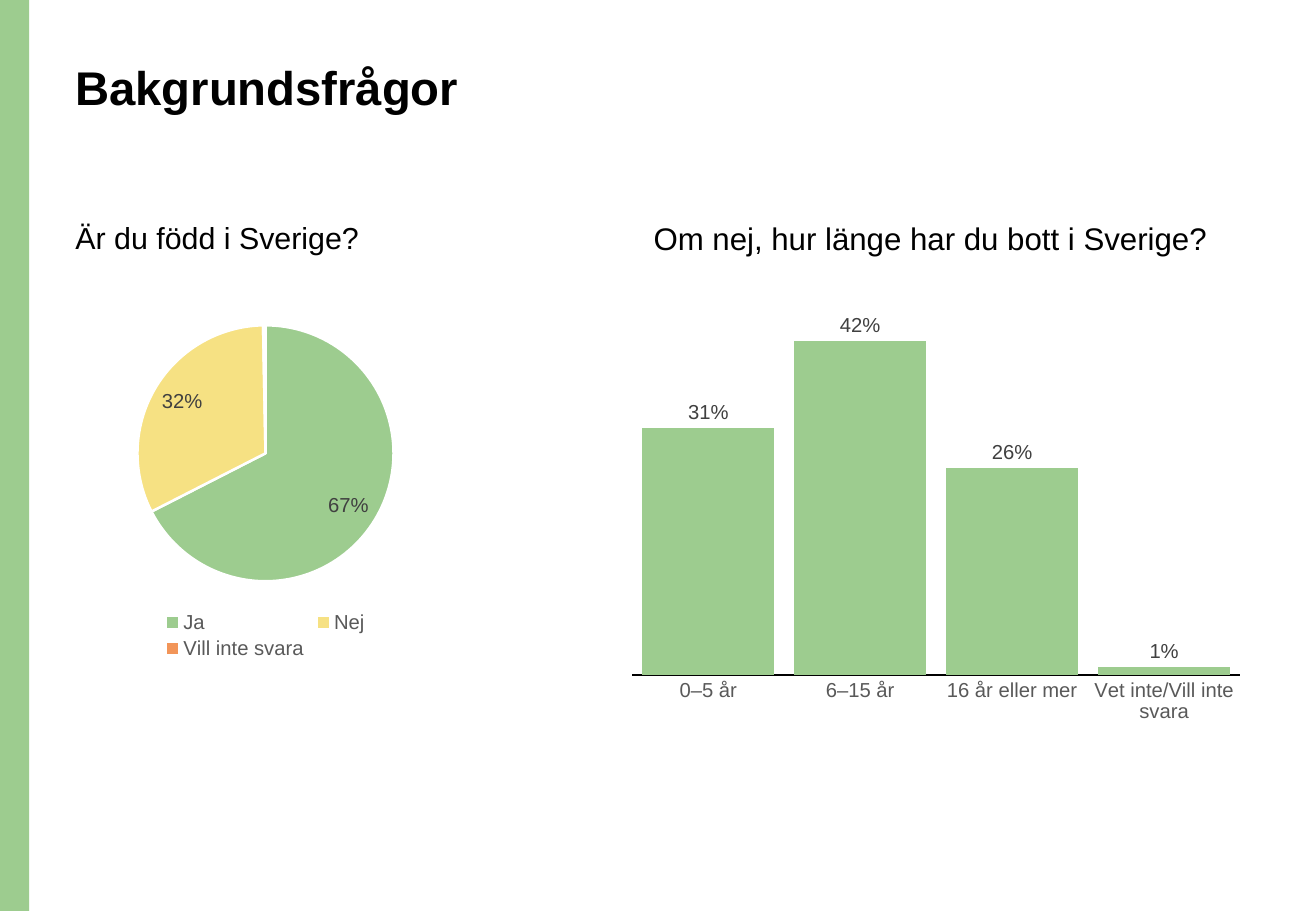
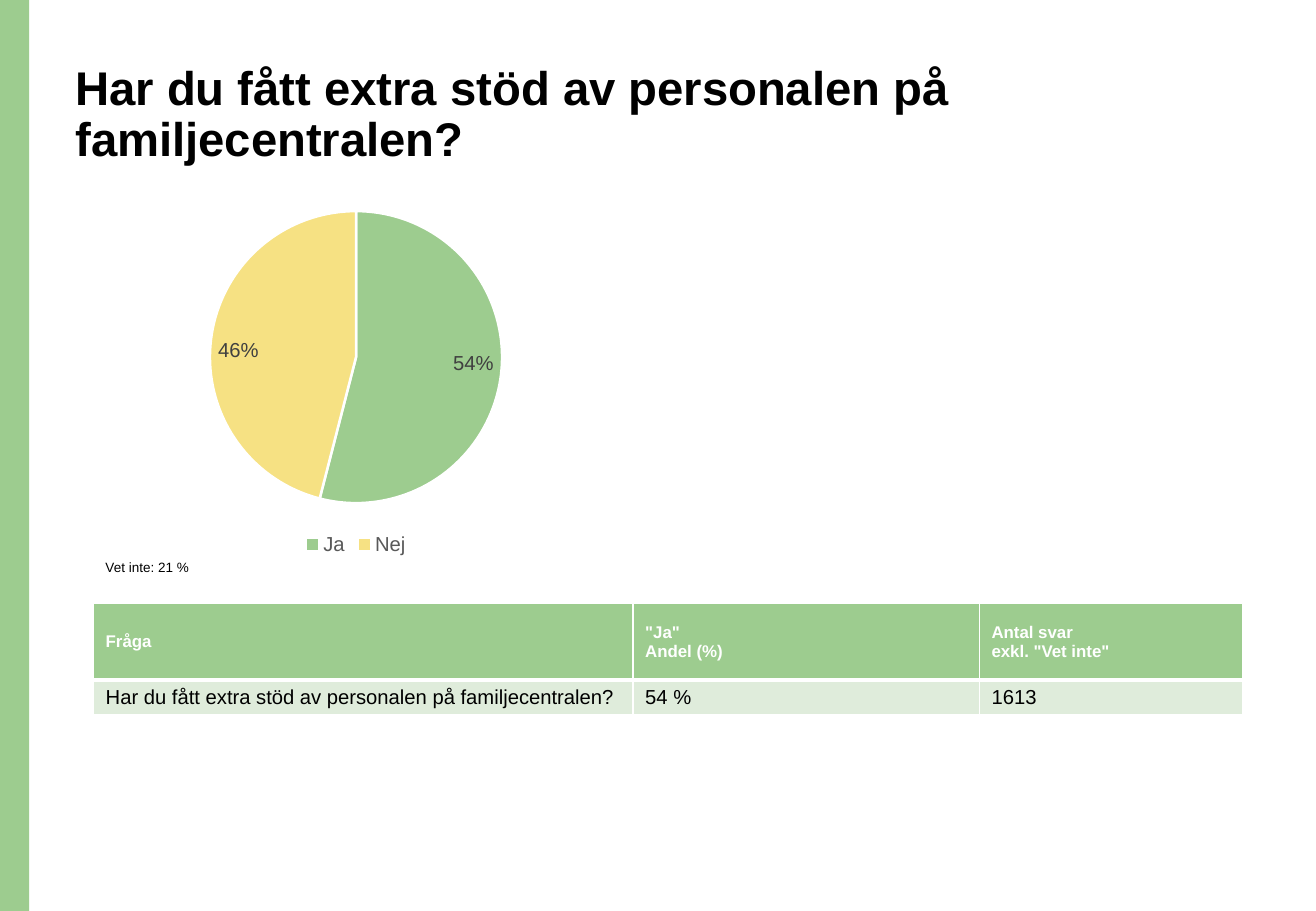
from lxml.etree import SubElement
from pptx import Presentation
from pptx.chart.data import CategoryChartData
from pptx.dml.color import RGBColor
from pptx.enum.chart import XL_CHART_TYPE as ChartType
from pptx.enum.chart import XL_LABEL_POSITION as LabelPos
from pptx.enum.chart import XL_LEGEND_POSITION as LegendPos
from pptx.enum.chart import XL_TICK_MARK as TickMark
from pptx.enum.shapes import MSO_SHAPE as Shape
from pptx.enum.text import MSO_ANCHOR as Anchor
from pptx.enum.text import MSO_AUTO_SIZE as AutoSize
from pptx.enum.text import PP_ALIGN as Align
from pptx.oxml.ns import qn
from pptx.util import Inches, Pt

FONT = "Arial"
GREEN, YELLOW, ORANGE, PALE_GREEN = "9DCC8F", "F6E183", "F29559", "DFECDB"
BLACK, WHITE, LABEL_GRAY, AXIS_GRAY = "000000", "FFFFFF", "404040", "595959"
PIE_FORMAT = '[<0.01]"";[>0.01]0%'
LEFT = 0.52
TITLE_BOX = (LEFT, 0.48, 9.34, 1.02)


# Shared helpers
def color(hex_code):
    return RGBColor.from_string(hex_code)


def inches(box):
    return [Inches(length) for length in box]


def place(shape, box):
    shape.left, shape.top, shape.width, shape.height = inches(box)


def set_font(font, size, hex_code, bold=False):
    font.name, font.size, font.bold = FONT, Pt(size), bold
    font.color.rgb = color(hex_code)


def write(para, text, size, hex_code=BLACK, bold=False, spacing=None):
    para.alignment = Align.LEFT
    para.space_before = Pt(0)
    if spacing:
        para.line_spacing = spacing
    span = para.add_run()
    span.text = text
    set_font(span.font, size, hex_code, bold)


def write_frame(frame, text, size, bold=False, spacing=0.9):
    frame.word_wrap = True
    frame.auto_size = AutoSize.NONE
    frame.vertical_anchor = Anchor.TOP
    write(frame.paragraphs[0], text, size, bold=bold, spacing=spacing)


def add_text(page, box, text, size, spacing=0.9):
    text_box = page.shapes.add_textbox(*inches(box))
    write_frame(text_box.text_frame, text, size, spacing=spacing)
    return text_box


# Page frame: the green band belongs to the master
def add_band(deck, page):
    band = page.shapes.add_shape(Shape.RECTANGLE, 0, 0, Inches(0.24), deck.slide_height)
    band.shadow.inherit = False
    band.fill.solid()
    band.fill.fore_color.rgb = color(GREEN)
    band.line.fill.background()
    deck.slide_master.shapes.element.insert(2, band.element)


def add_page(deck, layout_name, title):
    page = deck.slides.add_slide(deck.slide_layouts.get_by_name(layout_name))
    place(page.shapes.title, TITLE_BOX)
    write_frame(page.shapes.title.text_frame, title, 28, bold=True)
    return page


def fill_body(page, box, text):
    body = page.placeholders[1]
    place(body, box)
    props = body.text_frame.paragraphs[0]._p.get_or_add_pPr()
    props.set("marL", "0")
    props.set("indent", "0")
    SubElement(props, qn("a:buNone"))
    write_frame(body.text_frame, text, 18)


# Charts
def add_chart(page, box, kind, values, number_format, label_pos):
    data = CategoryChartData()
    data.categories = list(values)
    data.add_series("Series 1", list(values.values()))
    chart = page.shapes.add_chart(kind, *inches(box), data).chart
    chart.has_title = False
    chart.has_legend = False
    set_font(chart.font, 10, BLACK)
    plot = chart.plots[0]
    series = plot.series[0]
    labels = series.data_labels
    labels.show_value = True
    labels.number_format = number_format
    labels.number_format_is_linked = False
    labels.position = label_pos
    set_font(labels.font, 12, LABEL_GRAY)
    return chart, plot, series


def add_pie(page, box, values):
    chart, plot, series = add_chart(
        page, box, ChartType.PIE, values, PIE_FORMAT, LabelPos.INSIDE_END)
    plot.vary_by_categories = True
    for index, hex_code in zip(range(len(values)), (GREEN, YELLOW, ORANGE)):
        look = series.points[index].format
        look.fill.solid()
        look.fill.fore_color.rgb = color(hex_code)
        look.line.color.rgb = color(WHITE)
        look.line.width = Pt(1.5)
    chart.has_legend = True
    chart.legend.position = LegendPos.BOTTOM
    chart.legend.include_in_layout = False
    set_font(chart.legend.font, 12, AXIS_GRAY)


def add_columns(page, box, values):
    chart, plot, series = add_chart(
        page, box, ChartType.COLUMN_CLUSTERED, values, "0%", LabelPos.OUTSIDE_END)
    plot.vary_by_categories = False
    plot.gap_width, plot.overlap = 15, -27
    series.format.fill.solid()
    series.format.fill.fore_color.rgb = color(GREEN)
    scale = chart.value_axis
    scale.minimum_scale, scale.maximum_scale = 0, 0.45
    scale.has_major_gridlines = False
    scale.visible = False
    axis = chart.category_axis
    axis.major_tick_mark = axis.minor_tick_mark = TickMark.NONE
    axis.format.line.color.rgb = color(BLACK)
    axis.format.line.width = Pt(0.75)
    set_font(axis.tick_labels.font, 12, AXIS_GRAY)


# Table
def set_borders(cell, bottom):
    props = cell._tc.get_or_add_tcPr()
    widths = {"a:lnL": 1, "a:lnR": 1, "a:lnT": 1, "a:lnB": bottom}
    for index, (tag, width) in enumerate(widths.items()):
        line = SubElement(props, qn(tag), w=str(Pt(width)))
        SubElement(SubElement(line, qn("a:solidFill")), qn("a:srgbClr"), val=WHITE)
        props.insert(index, line)


def add_answer_table(page, box, widths, heights, rows):
    table = page.shapes.add_table(len(rows), len(widths), *inches(box)).table
    table.horz_banding = False
    for column, width in zip(table.columns, widths):
        column.width = Inches(width)
    for row, height in zip(table.rows, heights):
        row.height = Inches(height)
    for row_index, row in enumerate(rows):
        header = row_index == 0
        size, ink, fill = (10, WHITE, GREEN) if header else (12, BLACK, PALE_GREEN)
        for column_index, lines in enumerate(row):
            cell = table.cell(row_index, column_index)
            cell.vertical_anchor = Anchor.MIDDLE
            cell.fill.solid()
            cell.fill.fore_color.rgb = color(fill)
            set_borders(cell, 3 if header else 1)
            frame = cell.text_frame
            for number, text in enumerate(lines):
                para = frame.add_paragraph() if number else frame.paragraphs[0]
                write(para, text, size, ink, header)


# Slides
def build_background(deck):
    page = add_page(deck, "Title and Content", "Bakgrundsfrågor")
    add_band(deck, page)
    fill_body(page, (LEFT, 1.79, 4.58, 0.46), "Är du född i Sverige?")
    add_pie(page, (LEFT, 2.54, 3.33, 2.93),
            {"Ja": 0.67, "Nej": 0.32, "Vill inte svara": 0.003})
    add_text(page, (5.28, 1.79, 5.03, 0.58),
             "Om nej, hur länge har du bott i Sverige?", 18.5)
    add_columns(page, (5.1, 2.54, 5.21, 3.48),
                {"0–5 år": 0.31, "6–15 år": 0.42, "16 år eller mer": 0.26,
                 "Vet inte/Vill inte svara": 0.01})


def build_support(deck):
    question = "Har du fått extra stöd av personalen på familjecentralen?"
    page = add_page(deck, "Title Only", question)
    add_pie(page, (1.22, 1.6, 3.42, 3.01), {"Ja": 0.54, "Nej": 0.46})
    add_answer_table(
        page, (0.77, 4.97, 9.46, 0.86), (4.44, 2.85, 2.17), (0.63, 0.23),
        [[["Fråga"], ['"Ja"', "Andel (%)"], ["Antal svar", 'exkl. "Vet inte"']],
         [[question], ["54 %"], ["1613"]]])
    note = add_text(page, (0.77, 4.49, 2.1, 0.48), "Vet inte: 21 %", 8, 1.5)
    note.text_frame.auto_size = AutoSize.SHAPE_TO_FIT_TEXT


def main():
    deck = Presentation()
    deck.slide_width, deck.slide_height = Inches(10.83), Inches(7.5)
    build_background(deck)
    build_support(deck)
    deck.save("out.pptx")


if __name__ == "__main__":
    main()
